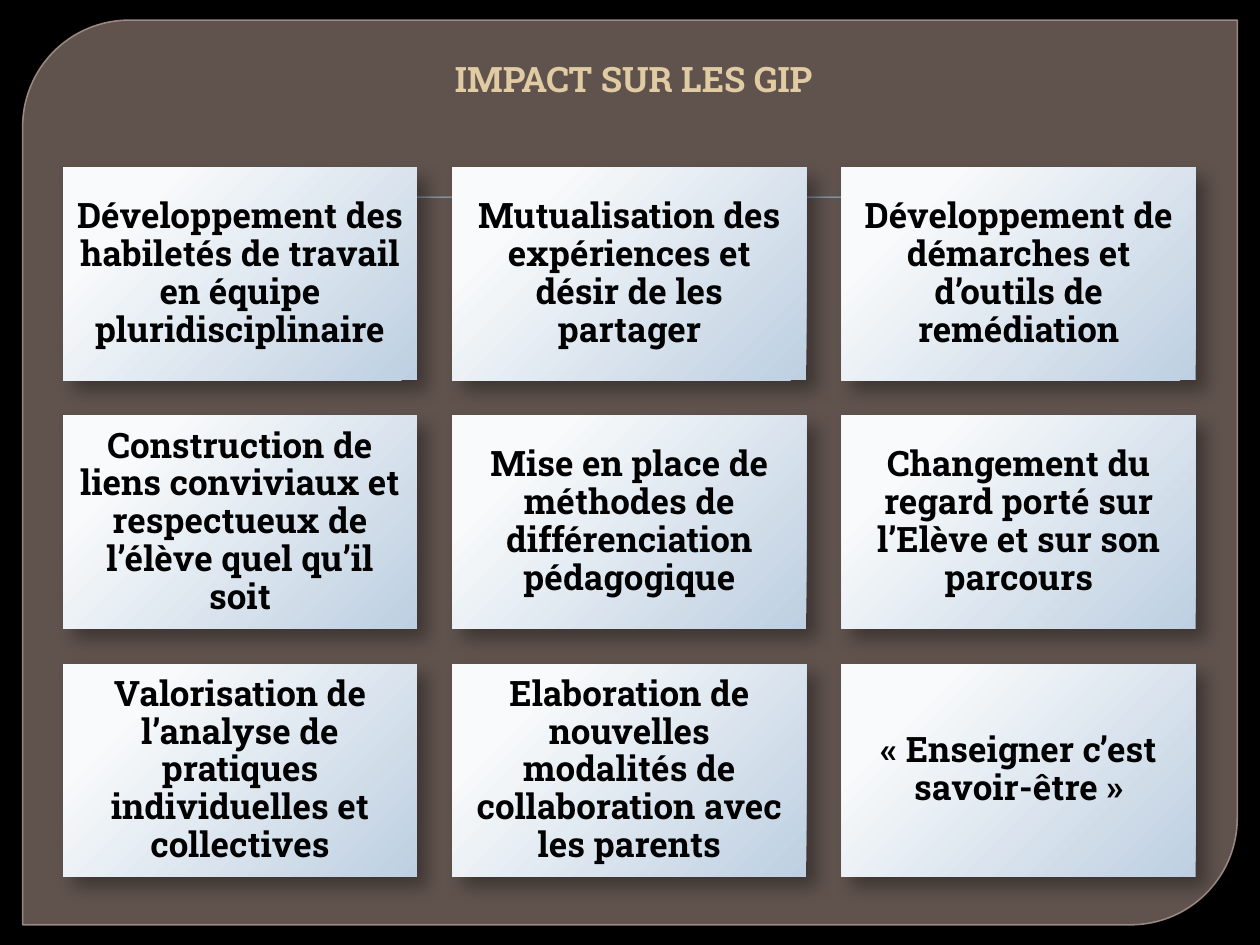
from dataclasses import dataclass

from lxml.etree import SubElement
from pptx import Presentation
from pptx.dml.color import RGBColor
from pptx.enum.shapes import MSO_SHAPE as Preset
from pptx.enum.text import MSO_ANCHOR as Anchor, PP_ALIGN as Align
from pptx.oxml.ns import qn
from pptx.shapes.autoshape import Shape
from pptx.slide import Slide
from pptx.util import Inches, Pt

BLACK = RGBColor(0x00, 0x00, 0x00)
PANEL_FILL = RGBColor(0x94, 0x80, 0x79)
PANEL_LINE = RGBColor(0xA9, 0x94, 0x8D)
RULE_BLUE = RGBColor(0x94, 0xB6, 0xD2)
TITLE_SAND = RGBColor(0xE0, 0xCB, 0xA3)
CARD_LIGHT = RGBColor(0xF8, 0xFA, 0xFB)
CARD_BLUE = RGBColor(0xBD, 0xCF, 0xE1)

COLUMNS = 3
GRID_LEFT, GRID_TOP = 0.5, 1.33
CARD_WIDTH, CARD_HEIGHT = 2.81, 1.69
GAP = 0.28
FONT = {"name": "Roboto Slab", "size": Pt(20), "bold": True}
CARD_FRAME = {
    "word_wrap": True,
    "vertical_anchor": Anchor.MIDDLE,
    "margin_left": Inches(0.08),
    "margin_right": Inches(0.08),
    "margin_top": Inches(0.08),
    "margin_bottom": Inches(0.08),
}
TITLE_FRAME = {
    "word_wrap": True,
    "vertical_anchor": Anchor.BOTTOM,
    "margin_left": Inches(0.16),
}
IMPACTS = [
    "Développement des habiletés de travail en équipe pluridisciplinaire",
    "Mutualisation des expériences et désir de les partager",
    "Développement de démarches et d’outils de remédiation",
    "Construction de liens conviviaux et respectueux de l’élève quel qu’il soit",
    "Mise en place de méthodes de différenciation pédagogique",
    "Changement du regard porté sur l’Elève et sur son parcours",
    "Valorisation de l’analyse de pratiques individuelles et collectives",
    "Elaboration de nouvelles modalités de collaboration avec les parents",
    "« Enseigner c’est savoir-être »",
]


@dataclass(frozen=True)
class Box:
    left: float
    top: float
    width: float
    height: float

    def lengths(self) -> list[int]:
        return [Inches(v) for v in (self.left, self.top, self.width, self.height)]


@dataclass(frozen=True)
class Shadow:
    opacity: int
    blur: float
    distance: float
    angle: int


RULE_SHADOW = Shadow(75, 1, 1, 90)
CARD_SHADOW = Shadow(35, 10.2, 8, 45)


def set_opacity(color_parent, percent: int) -> None:
    for color in color_parent.iter(qn("a:srgbClr")):
        SubElement(color, qn("a:alpha"), val=str(percent * 1000))


def add_preset(slide: Slide, preset: Preset, box: Box) -> Shape:
    shape = slide.shapes.add_shape(preset, *box.lengths())
    shape.shadow.inherit = False
    shape.line.fill.background()
    return shape


def cast_shadow(shape: Shape, shadow: Shadow) -> None:
    effects = shape.element.spPr.find(qn("a:effectLst"))
    outer = SubElement(
        effects,
        qn("a:outerShdw"),
        blurRad=str(Pt(shadow.blur)),
        dist=str(Pt(shadow.distance)),
        dir=str(shadow.angle * 60000),
        algn="tl",
        rotWithShape="0",
    )
    SubElement(outer, qn("a:srgbClr"), val=str(BLACK))
    set_opacity(outer, shadow.opacity)


def fill_radial(shape: Shape) -> None:
    shape.fill.gradient()
    stops = zip(shape.fill.gradient_stops, ((0.2, CARD_LIGHT), (1, CARD_BLUE)))
    for stop, (position, color) in stops:
        stop.position = position
        stop.color.rgb = color
    gradient = shape.element.spPr.find(qn("a:gradFill"))
    gradient.remove(gradient.find(qn("a:lin")))
    radial = SubElement(gradient, qn("a:path"), path="circle")
    SubElement(radial, qn("a:fillToRect"), l="-15000", t="-15000", r="115000", b="115000")


def write_text(shape: Shape, text: str, color: RGBColor, frame_format: dict) -> None:
    frame = shape.text_frame
    for name, value in frame_format.items():
        setattr(frame, name, value)
    paragraph = frame.paragraphs[0]
    paragraph.alignment = Align.CENTER
    run = paragraph.add_run()
    run.text = text
    for name, value in FONT.items():
        setattr(run.font, name, value)
    run.font.color.rgb = color


def add_panel(slide: Slide) -> None:
    panel = add_preset(slide, Preset.ROUND_2_DIAG_RECTANGLE, Box(0.18, 0.16, 9.64, 7.18))
    panel.adjustments[0] = 0.118
    panel.adjustments[1] = 0
    panel.fill.solid()
    panel.fill.fore_color.rgb = PANEL_FILL
    set_opacity(panel.element.spPr.find(qn("a:solidFill")), 65)
    panel.line.color.rgb = PANEL_LINE
    panel.line.width = Pt(0.87)
    set_opacity(panel.element.spPr.find(qn("a:ln")), 88)


def add_rule(slide: Slide) -> None:
    rule = add_preset(slide, Preset.RECTANGLE, Box(0.64, 1.56, 8.75, 0.01))
    rule.fill.solid()
    rule.fill.fore_color.rgb = RULE_BLUE
    cast_shadow(rule, RULE_SHADOW)


def add_title(slide: Slide) -> None:
    title = slide.shapes.add_textbox(*Box(0.5, 0.28, 9, 0.56).lengths())
    write_text(title, "IMPACT SUR LES GIP", TITLE_SAND, TITLE_FRAME)


def add_card(slide: Slide, index: int, text: str) -> None:
    row, column = divmod(index, COLUMNS)
    left = GRID_LEFT + column * (CARD_WIDTH + GAP)
    top = GRID_TOP + row * (CARD_HEIGHT + GAP)
    card = add_preset(slide, Preset.RECTANGLE, Box(left, top, CARD_WIDTH, CARD_HEIGHT))
    fill_radial(card)
    cast_shadow(card, CARD_SHADOW)
    write_text(card, text, BLACK, CARD_FRAME)
    card.text_frame.paragraphs[0].line_spacing = 0.9


def main() -> None:
    presentation = Presentation()
    presentation.slide_width = Inches(10)
    presentation.slide_height = Inches(7.5)
    slide = presentation.slides.add_slide(presentation.slide_layouts[6])
    slide.background.fill.solid()
    slide.background.fill.fore_color.rgb = BLACK
    add_panel(slide)
    add_rule(slide)
    add_title(slide)
    for index, text in enumerate(IMPACTS):
        add_card(slide, index, text)
    presentation.save("out.pptx")


if __name__ == "__main__":
    main()
